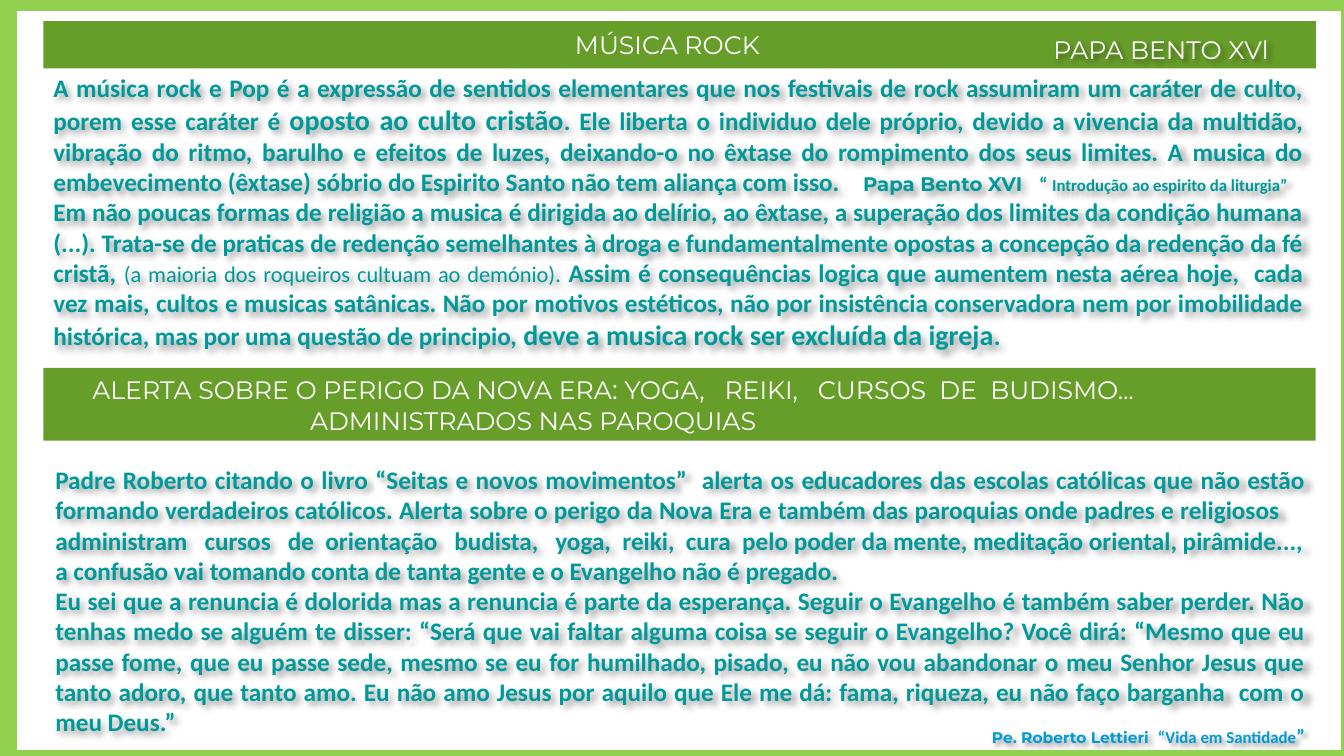
from pptx import Presentation
from pptx.dml.color import RGBColor
from pptx.enum.shapes import MSO_SHAPE as Preset
from pptx.enum.text import MSO_ANCHOR as Anchor, MSO_AUTO_SIZE as AutoSize, PP_ALIGN as Align
from pptx.oxml import parse_xml
from pptx.oxml.ns import nsdecls
from pptx.util import Inches, Pt

TEAL, GREEN, LIME, WHITE = "009999", "679E2A", "92D050", "FFFFFF"
BODY, DISPLAY = "Calibri", "Montserrat"
SHADOW = (
    f'<a:effectLst {nsdecls("a")}>'
    '<a:outerShdw blurRad="50800" dist="38100" dir="2700000" algn="tl" rotWithShape="0">'
    '<a:srgbClr val="000000"><a:alpha val="40000"/></a:srgbClr>'
    '</a:outerShdw></a:effectLst>'
)


def colour(value):
    """Turn a hex string into a colour."""
    return RGBColor.from_string(value)


class Page:
    """Hold the style and the slide; boxes are percentages of the slide's size."""

    def __init__(self, presentation):
        """Add a title-only slide."""
        self.width, self.height = presentation.slide_width, presentation.slide_height
        self.slide = presentation.slides.add_slide(presentation.slide_layouts[5])

    def box(self, left, top, width, height):
        """Convert percentages into lengths."""
        return (round(left * self.width / 100), round(top * self.height / 100),
                round(width * self.width / 100), round(height * self.height / 100))

    def fill_text(self, shape, paragraphs, ink, align=Align.LEFT, anchor=Anchor.TOP, wrap=True):
        """Fill a shape with (indent, runs) paragraphs; a run is text, size, font, bold."""
        frame = shape.text_frame
        frame.word_wrap, frame.auto_size = wrap, AutoSize.NONE
        frame.vertical_anchor = anchor
        for index, (indent, runs) in enumerate(paragraphs):
            paragraph = frame.add_paragraph() if index else frame.paragraphs[0]
            paragraph.alignment = align
            properties = paragraph._p.get_or_add_pPr()
            properties.set("marL", str(round(indent * self.width / 100)))
            properties.set("indent", "0")
            for text, size, font, bold in runs:
                run = paragraph.add_run()
                run.text = text
                run.font.size, run.font.name, run.font.bold = Pt(size), font, bold
                run.font.color.rgb = colour(ink)

    def bar(self, shape, paragraphs):
        """Style a shape as a green heading bar."""
        shape.fill.solid()
        shape.fill.fore_color.rgb = colour(GREEN)
        shape.line.fill.background()
        self.fill_text(shape, paragraphs, WHITE, anchor=Anchor.MIDDLE)

    def title(self, box, paragraphs):
        """Turn the title placeholder into a heading bar."""
        shape = self.slide.shapes.title
        shape.left, shape.top, shape.width, shape.height = self.box(*box)
        self.bar(shape, paragraphs)

    def rectangle(self, box):
        """Add a rectangle without shadow."""
        shape = self.slide.shapes.add_shape(Preset.RECTANGLE, *self.box(*box))
        shape.shadow.inherit = False
        return shape

    def heading(self, box, paragraphs):
        """Add a further heading bar."""
        self.bar(self.rectangle(box), paragraphs)

    def border(self, box, ink, weight):
        """Add an unfilled frame."""
        shape = self.rectangle(box)
        shape.fill.background()
        shape.line.color.rgb, shape.line.width = colour(ink), Pt(weight)

    def text(self, box, paragraphs, ink, align=Align.LEFT, wrap=True):
        """Add a text box with a soft shadow."""
        shape = self.slide.shapes.add_textbox(*self.box(*box))
        self.fill_text(shape, paragraphs, ink, align, wrap=wrap)
        shape._element.spPr.append(parse_xml(SHADOW))


ROCK = [
    (0, [
        ("A música rock e Pop é a expressão de sentidos elementares que nos festivais de rock "
         "assumiram um caráter de culto, porem esse caráter é ", 18, BODY, True),
        ("oposto ao culto cristão", 20, BODY, True),
        (". Ele liberta o individuo dele próprio, devido a vivencia da multidão, vibração do ritmo, "
         "barulho e efeitos de luzes, deixando-o no êxtase do rompimento dos seus limites. A musica "
         "do embevecimento (êxtase) sóbrio do Espirito Santo não tem aliança com isso.    ",
         18, BODY, True),
        ("Papa Bento XVI   ", 14, DISPLAY, True),
        ("“ ", 14, BODY, True),
        ("Introdução ao espirito da liturgia”", 12, BODY, True),
    ]),
    (0, [
        ("Em não poucas formas de religião a musica é dirigida ao delírio, ao êxtase, a superação "
         "dos limites da condição humana (...). Trata-se de praticas de redenção semelhantes à droga "
         "e fundamentalmente opostas a concepção da redenção da fé cristã, ", 18, BODY, True),
        ("(a maioria dos roqueiros cultuam ao demónio). ", 16, BODY, False),
        ("Assim é consequências logica que aumentem nesta aérea hoje,  cada vez mais, cultos e "
         "musicas satânicas. Não por motivos estéticos, não por insistência conservadora nem por "
         "imobilidade histórica, mas por uma questão de principio, ", 18, BODY, True),
        ("deve a musica rock ser excluída da igreja", 20, BODY, True),
        (".", 18, BODY, True),
    ]),
]
NEW_AGE = [(0, [(text, 18, BODY, True)]) for text in (
    "Padre Roberto citando o livro “Seitas e novos movimentos”  alerta os educadores das escolas "
    "católicas que não estão formando verdadeiros católicos. Alerta sobre o perigo da Nova Era e "
    "também das paroquias onde padres e religiosos     administram   cursos   de  orientação   "
    "budista,   yoga,  reiki,  cura  pelo poder da mente, meditação oriental, pirâmide...,",
    "a confusão vai tomando conta de tanta gente e o Evangelho não é pregado. ",
    "Eu sei que a renuncia é dolorida mas a renuncia é parte da esperança. Seguir o Evangelho é "
    "também saber perder. Não tenhas medo se alguém te disser: “Será que vai faltar alguma coisa "
    "se seguir o Evangelho? Você dirá: “Mesmo que eu passe fome, que eu passe sede, mesmo se eu "
    "for humilhado, pisado, eu não vou abandonar o meu Senhor Jesus que tanto adoro, que tanto "
    "amo. Eu não amo Jesus por aquilo que Ele me dá: fama, riqueza, eu não faço barganha  com o "
    "meu Deus.” ",
)]
ALERT = [
    (2.9, [
        ("ALERTA SOBRE O PERIGO DA NOVA ERA", 18, DISPLAY, False),
        (": ", 19, DISPLAY, False),
        ("YOGA,   REIKI,   CURSOS  DE  BUDISMO...", 18, DISPLAY, False),
    ]),
    (19.1, [("ADMINISTRADOS NAS PAROQUIAS", 18, DISPLAY, False)]),
]
CREDIT = [(0, [
    ("Pe. Roberto Lettieri  ", 11, DISPLAY, True),
    ("“Vida em Santidade", 12, BODY, True),
    ("”", 14, BODY, True),
])]


def main():
    """Build and save the slide."""
    presentation = Presentation()
    presentation.slide_width, presentation.slide_height = Inches(13.33), Inches(7.5)
    page = Page(presentation)
    page.title((3.23, 2.8, 94.67, 6.27), [(38.8, [("MÚSICA ROCK", 18, DISPLAY, False)])])
    page.text((77.64, 3.87, 18.98, 5.33), [(0, [("PAPA BENTO XVl", 18, DISPLAY, False)])],
              WHITE, wrap=False)
    page.text((73.07, 95.07, 26.26, 4.53), CREDIT, "009BD2")
    page.border((0.6, 0.27, 99.85, 100.13), LIME, 12.25)
    page.text((3.23, 8.93, 94.52, 38.53), ROCK, TEAL, Align.JUSTIFY)
    page.heading((3.23, 48.67, 94.67, 9.6), ALERT)
    page.text((3.38, 60.8, 94.52, 37.73), NEW_AGE, TEAL, Align.JUSTIFY)
    presentation.save("out.pptx")


if __name__ == "__main__":
    main()
